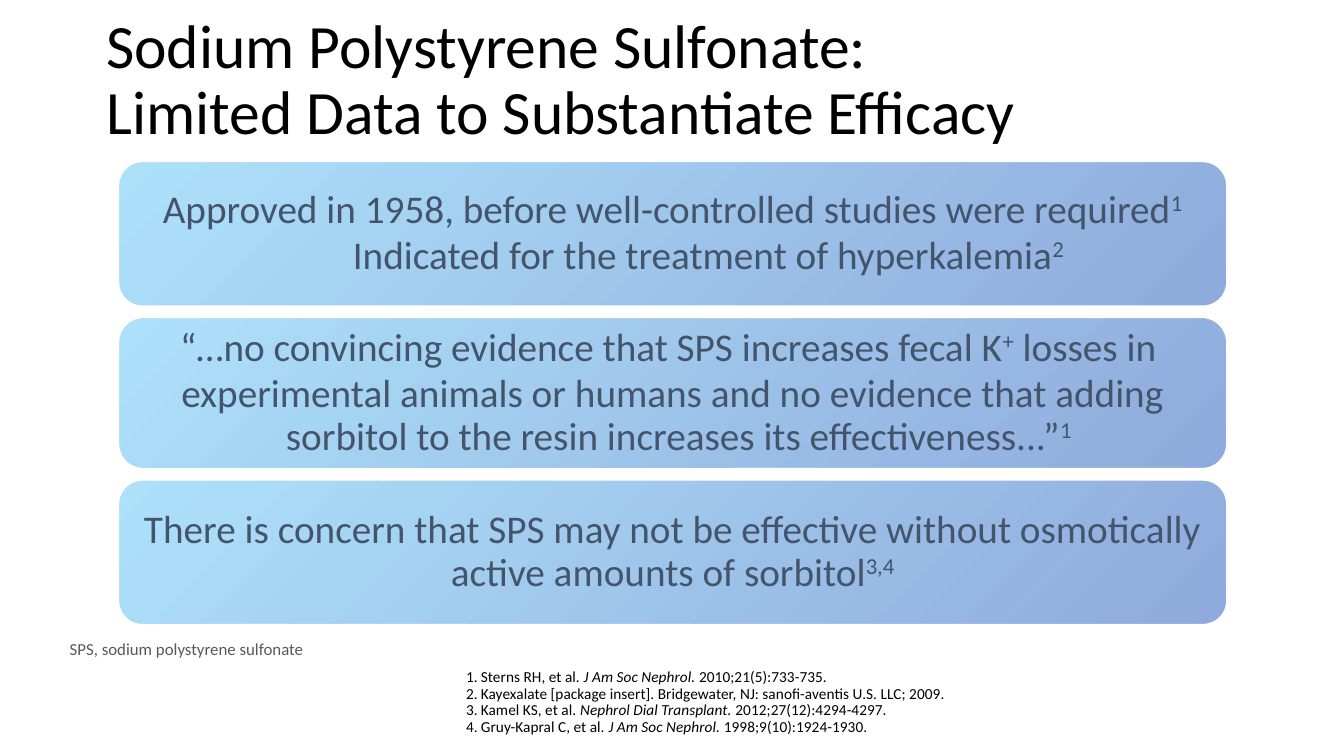
from pptx import Presentation
from pptx.dml.color import RGBColor
from pptx.enum.shapes import MSO_SHAPE as SHAPE
from pptx.enum.text import MSO_ANCHOR as ANCHOR, PP_ALIGN as ALIGN
from pptx.oxml.ns import qn
from pptx.util import Inches, Pt
from lxml.etree import SubElement

# Widescreen slide, 16:9
prs = Presentation()
prs.slide_width = Inches(10)
prs.slide_height = prs.slide_width * 9 // 16
s = prs.slides.add_slide(prs.slide_layouts[5])
rgb = RGBColor.from_string


def area(x, y, w, h):
    """Left, top, width and height from percentages of the slide."""
    W, H = prs.slide_width, prs.slide_height
    return [int(W * x / 100), int(H * y / 100), int(W * w / 100), int(H * h / 100)]


def write(tf, lines, size, color, spacing=0.9, raised=False):
    """Fill a frame; text between bars is raised or italic."""
    tf.word_wrap = True
    for i, line in enumerate(lines):
        p = tf.paragraphs[0] if i == 0 else tf.add_paragraph()
        p.line_spacing = spacing
        for j, part in enumerate(line.split("|")):
            if not part:
                continue
            r = p.add_run()
            r.text = part
            r.font.size, r.font.name = Pt(size), "Calibri"
            r.font.color.rgb = rgb(color)
            if j % 2 and raised:
                r.font._element.set("baseline", "30000")
            elif j % 2:
                r.font.italic = True


# Title
title = s.shapes.title
title.left, title.top, title.width, title.height = area(6.9, 1.07, 86.2, 19.38)
tf = title.text_frame
tf.text = "Sodium Polystyrene Sulfonate:\vLimited Data to Substantiate Efficacy"
tf.word_wrap, tf.vertical_anchor = True, ANCHOR.MIDDLE
p = tf.paragraphs[0]
p.alignment, p.line_spacing = ALIGN.LEFT, 0.9
for r in p.runs:
    r.font.size, r.font.name = Pt(33), "Calibri"
    r.font.color.rgb = rgb("000000")

# Statement panels, stacked: height %, first-line hang, lines, left indents
panels = [
    (19.2, 0, ["Approved in 1958, before well-controlled studies were required|1|",
               "Indicated for the treatment of hyperkalemia|2 |"], [0, 0.57]),
    (20.09, 0.09, ["“…no convincing evidence that SPS increases fecal K|+| losses in ",
                   "experimental animals or humans and no evidence that adding "
                   "sorbitol to the resin increases its effectiveness...”|1|"], [0.09, 0.09]),
    (19.2, 0, ["There is concern that SPS may not be effective without "
               "osmotically active amounts of sorbitol|3,4|"], [0]),
]
top, gap = 21.33, 1.42
for height, hang, lines, indents in panels:
    sp = s.shapes.add_shape(SHAPE.ROUNDED_RECTANGLE, *area(8.8, top, 82.5, height))
    sp.shadow.inherit = False
    sp.fill.gradient()
    sp.fill.gradient_angle = 315
    for stop, color in zip(sp.fill.gradient_stops, ("ADE1FA", "8FAADC")):
        stop.color.rgb = rgb(color)
    sp.line.color.rgb = rgb("FFFFFF")
    sp.line.width = Pt(1)
    tf = sp.text_frame
    tf.vertical_anchor = ANCHOR.MIDDLE
    tf.margin_top = tf.margin_bottom = 0
    write(tf, lines, 21, "44546A", raised=True)
    for i, (p, indent) in enumerate(zip(tf.paragraphs, indents)):
        p.alignment = ALIGN.CENTER
        p.space_before = Pt(2.2 if i else 0)
        pPr = p._p.get_or_add_pPr()
        pPr.set("marL", str(Inches(indent)))
        pPr.set("indent", str(-Inches(hang)))
    top += height + gap

# Abbreviation note
note = s.shapes.add_textbox(*area(4.2, 84.36, 95.8, 3.91))
write(note.text_frame, ["SPS, sodium polystyrene sulfonate"], 9, "595959", spacing=0.7)

# Numbered references
refs = s.shapes.add_textbox(*area(33.7, 87.64, 64.3, 10.67))
write(refs.text_frame, [
    "Sterns RH, et al. |J Am Soc Nephrol.| 2010;21(5):733-735.",
    "Kayexalate [package insert]. Bridgewater, NJ: sanofi-aventis U.S. LLC; 2009.",
    "Kamel KS, et al. |Nephrol Dial Transplant.| 2012;27(12):4294-4297.",
    "Gruy-Kapral C, et al. |J Am Soc Nephrol.| 1998;9(10):1924-1930.",
], 8.25, "000000")
for p in refs.text_frame.paragraphs:
    pPr = p._p.get_or_add_pPr()
    pPr.set("marL", str(Inches(0.11)))
    pPr.set("indent", str(-Inches(0.11)))
    SubElement(pPr, qn("a:buFont"), typeface="+mj-lt")
    SubElement(pPr, qn("a:buAutoNum"), type="arabicPeriod")

prs.save("out.pptx")
